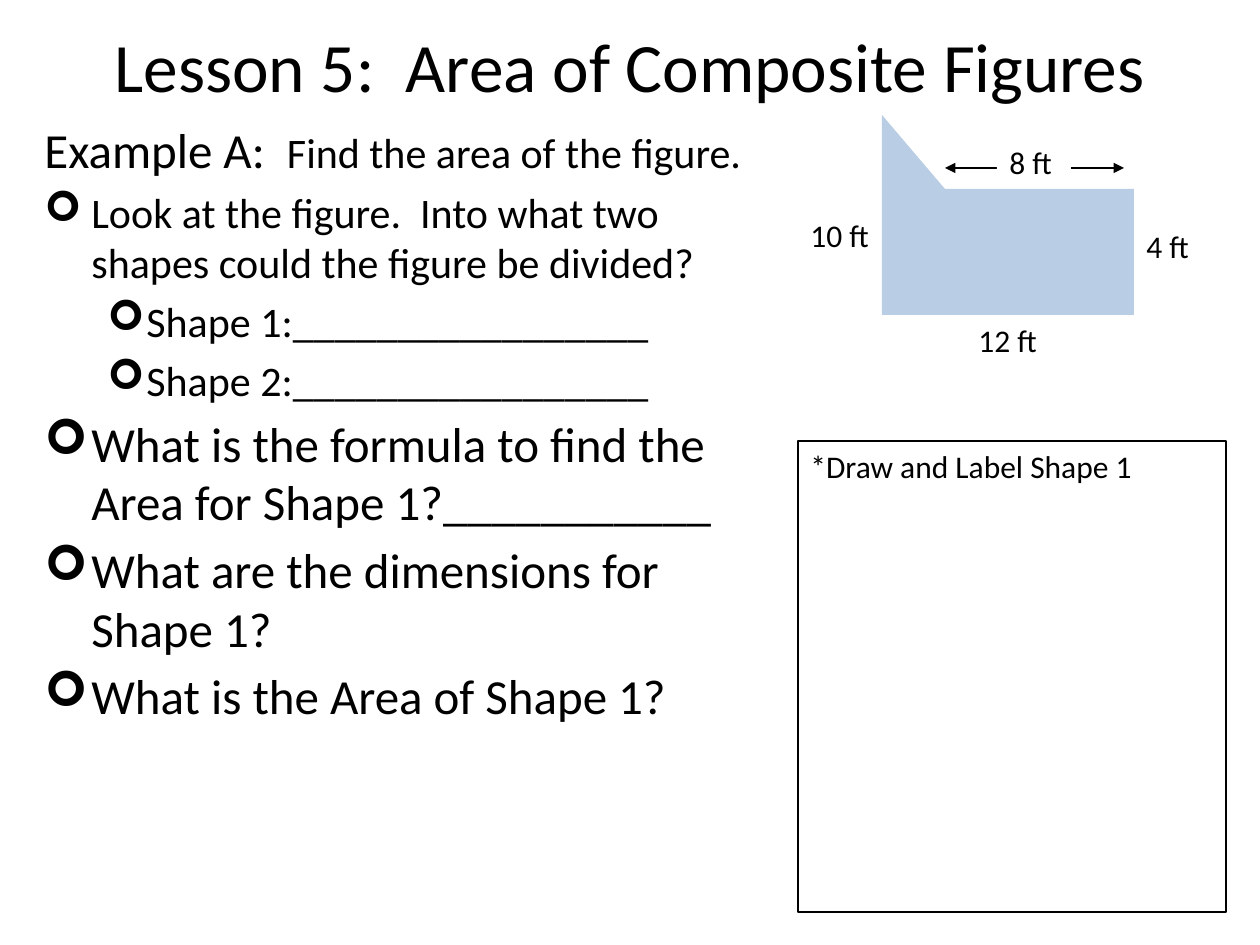
from lxml import etree
from pptx import Presentation
from pptx import util as u
from pptx.dml.color import RGBColor
from pptx.enum import shapes, text
from pptx.oxml.ns import qn

SCALE = 914400 / 126  # EMU per px
FONT, BLACK, WHITE, BLUE = "Calibri", "000000", "FFFFFF", "B9CDE5"
BLANK_LINE = "_" * 17


def px(n):
    return u.Emu(round(n * SCALE))


def color(value):
    return RGBColor.from_string(value)


def apply(obj, **values):
    for name, value in values.items():
        setattr(obj, name, value)


def add_run(p, words, size):
    r = p.add_run()
    r.text = words
    apply(r.font, name=FONT, size=u.Pt(size))
    r.font.color.rgb = color(BLACK)


def set_bullet(p, left, hang):
    pPr = p._p.get_or_add_pPr()
    pPr.set("marL", str(px(left)))
    pPr.set("indent", str(-px(hang)))
    etree.SubElement(pPr, qn("a:buFont"), typeface="Wingdings")
    etree.SubElement(pPr, qn("a:buChar"), char="➢")


def add_text(parent, box, words, size, align=text.PP_ALIGN.LEFT,
             anchor=text.MSO_ANCHOR.TOP):
    tf = parent.add_textbox(*map(px, box)).text_frame
    apply(tf, word_wrap=True, vertical_anchor=anchor)
    tf.paragraphs[0].alignment = align
    add_run(tf.paragraphs[0], words, size)


def add_box(parent, box, kind=shapes.MSO_SHAPE.RECTANGLE, fill=None, line=None,
            words=None):
    sp = parent.add_shape(kind, *map(px, box))
    sp.shadow.inherit = False
    if fill:
        sp.fill.solid()
        sp.fill.fore_color.rgb = color(fill)
    else:
        sp.fill.background()
    if line:
        sp.line.color.rgb = color(line)
        sp.line.width = u.Pt(0.75)
    else:
        sp.line.fill.background()
    if words:
        tf = sp.text_frame
        apply(tf, word_wrap=True, vertical_anchor=text.MSO_ANCHOR.TOP)
        tf.paragraphs[0].alignment = text.PP_ALIGN.LEFT
        add_run(tf.paragraphs[0], words, 18)
    return sp


def add_double_arrow(parent, x1, x2, y):
    line = parent.add_connector(shapes.MSO_CONNECTOR.STRAIGHT,
                                px(x1), px(y), px(x2), px(y))
    line.line.color.rgb = color(BLACK)
    line.line.width = u.Pt(0.75)
    ln = line.line._get_or_add_ln()
    for end in ("a:headEnd", "a:tailEnd"):
        etree.SubElement(ln, qn(end), type="triangle")
    etree.SubElement(line._element.spPr, qn("a:effectLst"))


def add_questions(parent, box):
    top, sub = (47, 47), (102, 39)  # left indent and hang of each level
    paragraphs = [
        (None, [("Example A:  ", 28), ("Find the area of the figure.", 24)]),
        (top, [("Look at the figure.  Into what two shapes could the figure "
                "be divided?", 24)]),
        (sub, [("Shape 1:" + BLANK_LINE, 24)]),
        (sub, [("Shape 2:" + BLANK_LINE, 24)]),
        (top, [("What is the formula to find the Area for Shape 1?"
                "___________", 28)]),
        (top, [("What are the dimensions for Shape 1?", 28)]),
        (top, [("What is the Area of Shape 1?", 28)]),
    ]
    tf = parent.add_textbox(*map(px, box)).text_frame
    tf.word_wrap = True
    for i, (indent, runs) in enumerate(paragraphs):
        p = tf.add_paragraph() if i else tf.paragraphs[0]
        p.space_before = u.Pt(4.8)
        if indent:
            set_bullet(p, *indent)
        for words, size in runs:
            add_run(p, words, size)


def add_figure(parent):
    group = parent.add_group_shape().shapes
    # Rectangle with a right triangle on its top left corner
    add_box(group, (882, 189, 252, 126), fill=BLUE)
    triangle = add_box(group, (882, 115, 63, 74),
                       shapes.MSO_SHAPE.ISOSCELES_TRIANGLE, fill=BLUE)
    triangle.adjustments[0] = 0
    # Side lengths
    for words, x, y, w in [("10 ft", 798, 210, 105), ("12 ft", 966, 315, 95),
                           ("4 ft", 1134, 221, 95)]:
        add_text(group, (x, y, w, 50), words, 18)
    add_double_arrow(group, 945, 1124, 168)
    add_box(group, (997, 137, 74, 50), fill=WHITE, words="8 ft")


def main():
    prs = Presentation()
    apply(prs, slide_width=px(1260), slide_height=px(945))
    s = prs.slides.add_slide(prs.slide_layouts[6])
    # Title and questions
    add_text(s.shapes, (63, 21, 1134, 88), "Lesson 5:  Area of Composite Figures",
             39.6, text.PP_ALIGN.CENTER, text.MSO_ANCHOR.MIDDLE)
    add_questions(s.shapes, (32, 113, 735, 822))
    # Drawing space and figure
    add_box(s.shapes, (798, 441, 428, 471), line=BLACK,
            words="*Draw and Label Shape 1")
    add_figure(s.shapes)
    prs.save("out.pptx")


if __name__ == "__main__":
    main()
